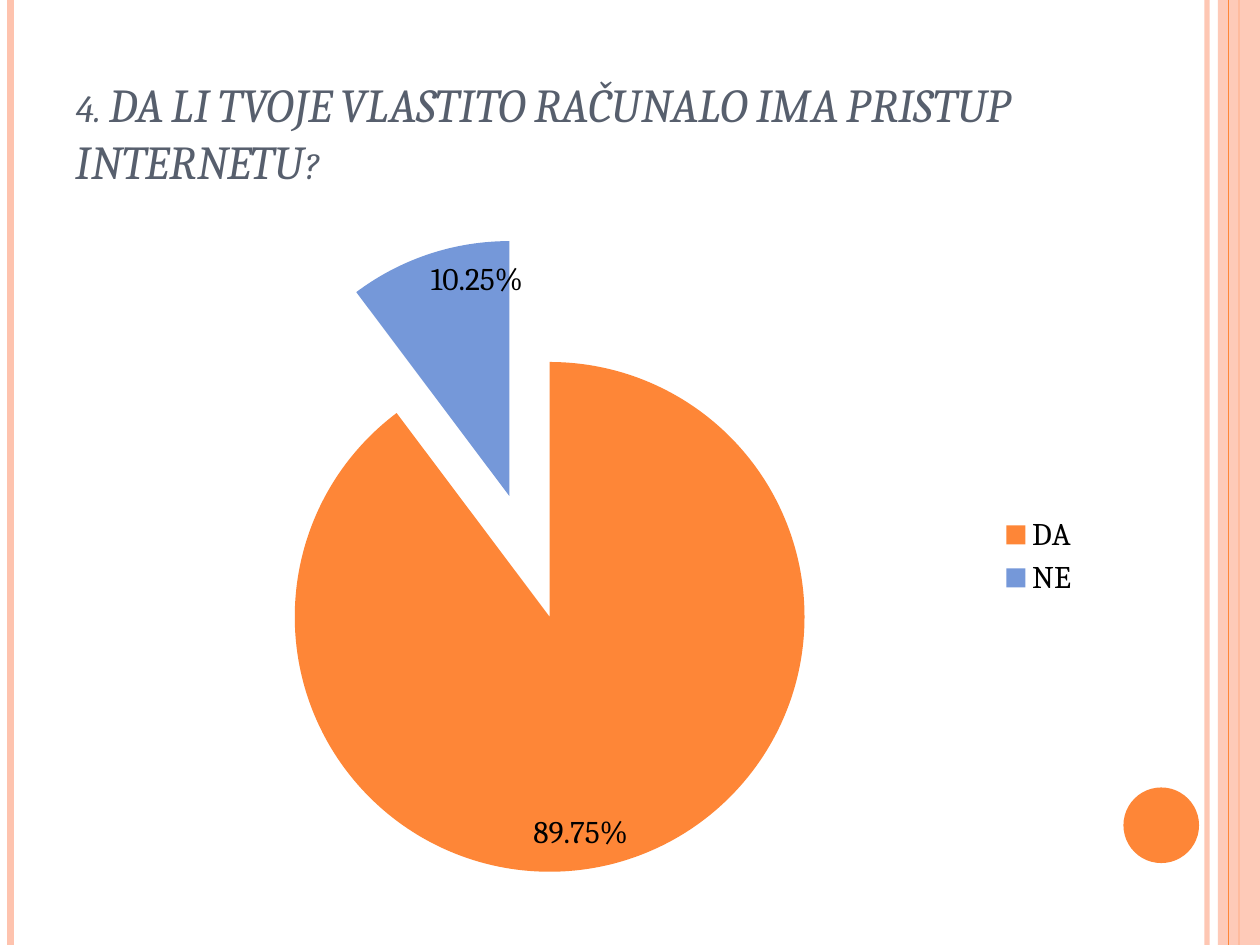
from pptx import Presentation
from pptx.chart.data import CategoryChartData
from pptx.dml.color import RGBColor
from pptx.enum.chart import XL_CHART_TYPE, XL_LABEL_POSITION, XL_LEGEND_POSITION
from pptx.enum.shapes import MSO_CONNECTOR, MSO_SHAPE
from pptx.enum.text import MSO_ANCHOR, MSO_AUTO_SIZE, PP_ALIGN
from pptx.oxml import parse_xml
from pptx.oxml.ns import nsdecls, qn
from pptx.util import Pt

ORANGE = RGBColor(0xFE, 0x86, 0x37)
PEACH = RGBColor(0xFE, 0xC3, 0xAE)
BLUE = RGBColor(0x75, 0x98, 0xD9)
SLATE = RGBColor(0x57, 0x5F, 0x6D)
BLACK = RGBColor(0, 0, 0)
FONT = "Cambria"
WIDTH, HEIGHT = 720, 540


def set_opacity(shape, percent):
    color = next(shape._element.spPr.iter(qn("a:srgbClr")))
    color.append(parse_xml(f'<a:alpha {nsdecls("a")} val="{percent * 1000}"/>'))


def add_stripe(page, x, color, weight):
    stripe = page.shapes.add_connector(
        MSO_CONNECTOR.STRAIGHT, Pt(x), Pt(0), Pt(x), Pt(HEIGHT))
    stripe.line.color.rgb = color
    stripe.line.width = Pt(weight)
    stripe._element.spPr.append(parse_xml(f'<a:effectLst {nsdecls("a")}/>'))
    return stripe


deck = Presentation()
deck.slide_width, deck.slide_height = Pt(WIDTH), Pt(HEIGHT)
page = deck.slides.add_slide(deck.slide_layouts[5])

set_opacity(add_stripe(page, 689.8, PEACH, 3), 93)
add_stripe(page, 6, PEACH, 4.5)
add_stripe(page, 708, ORANGE, 1.5)

band = page.shapes.add_shape(
    MSO_SHAPE.RECTANGLE, Pt(696), Pt(0), Pt(24), Pt(HEIGHT))
disc = page.shapes.add_shape(
    MSO_SHAPE.OVAL, Pt(642), Pt(450), Pt(43.2), Pt(43.2))
for shape, color in ((band, PEACH), (disc, ORANGE)):
    shape.shadow.inherit = False
    shape.fill.solid()
    shape.fill.fore_color.rgb = color
    shape.line.fill.background()
set_opacity(band, 87)

add_stripe(page, 702, ORANGE, 0.75)

title = page.shapes.title
title.left, title.top, title.width, title.height = Pt(36), Pt(21.6), Pt(588), Pt(90)
frame = title.text_frame
frame.word_wrap = True
frame.auto_size = MSO_AUTO_SIZE.NONE
frame.vertical_anchor = MSO_ANCHOR.BOTTOM
para = frame.paragraphs[0]
para.alignment = PP_ALIGN.LEFT
para.font.name = FONT
para.font.size = Pt(27)
para.font.italic = True
para.font.color.rgb = SLATE
span = para.add_run()
span.text = "4. DA LI TVOJE VLASTITO RAČUNALO IMA PRISTUP INTERNETU?"
span._r.get_or_add_rPr().set("cap", "small")

answers = CategoryChartData(number_format="0.00%")
answers.categories = ["DA", "NE"]
answers.add_series("Series 1", (0.8975, 0.1025))
chart = page.shapes.add_chart(
    XL_CHART_TYPE.PIE, Pt(36), Pt(126), Pt(588), Pt(384), answers).chart
chart.has_title = False
chart.font.name = FONT
chart.font.size = Pt(18)
chart.font.color.rgb = BLACK
chart.has_legend = True
chart.legend.position = XL_LEGEND_POSITION.RIGHT
chart.legend.include_in_layout = False

plot = chart.plots[0]
plot.vary_by_categories = True
plot.has_data_labels = True
labels = plot.data_labels
labels.show_value = True
labels.show_percentage = False
labels.number_format = "0.00%"
labels.number_format_is_linked = False
labels.position = XL_LABEL_POSITION.INSIDE_END

series = plot.series[0]
for index, color in enumerate((ORANGE, BLUE)):
    fill = series.points[index].format.fill
    fill.solid()
    fill.fore_color.rgb = color
explosion = parse_xml(f'<c:explosion {nsdecls("c")} val="25"/>')
series._element.find(qn("c:dPt")).addprevious(explosion)

deck.save("out.pptx")
